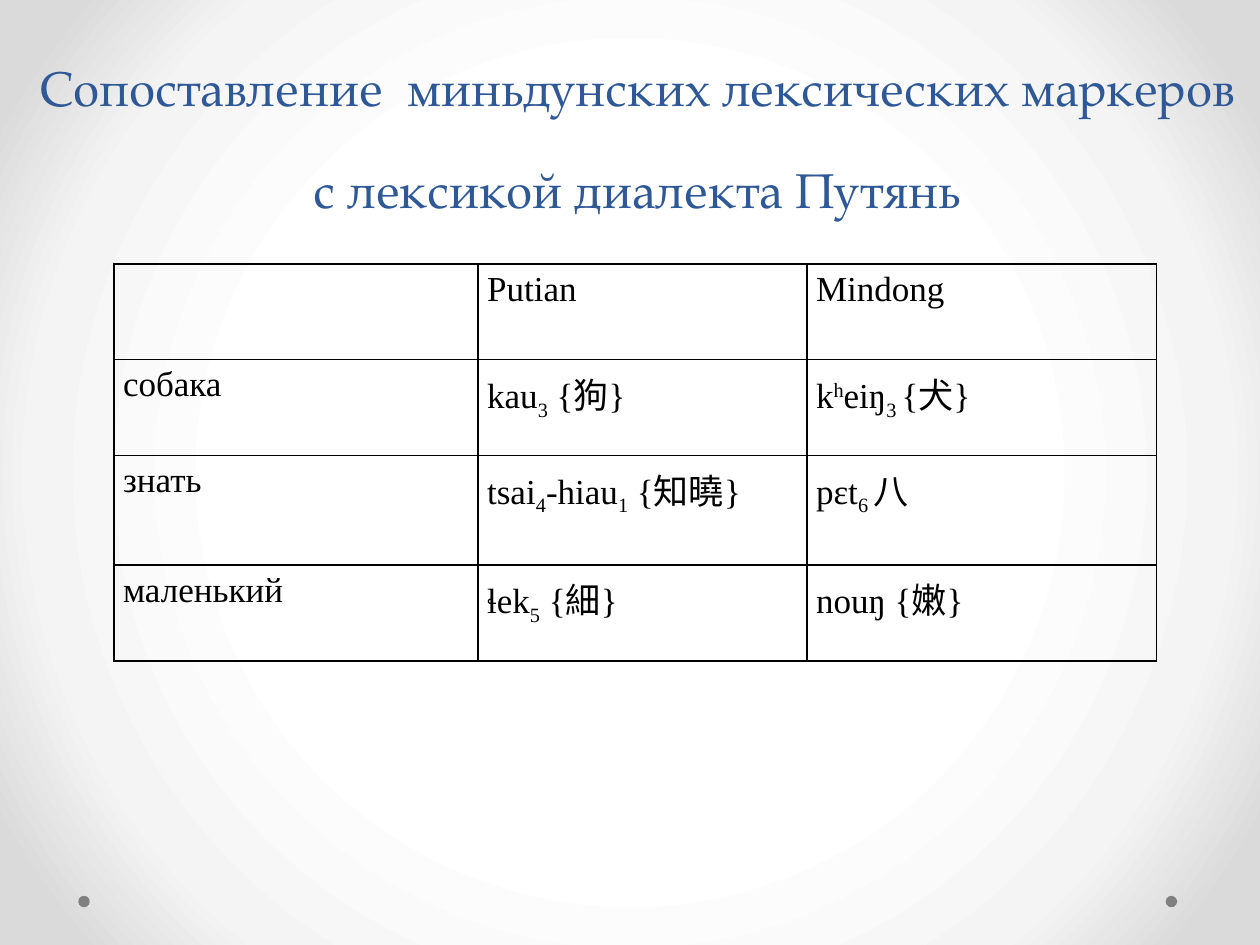
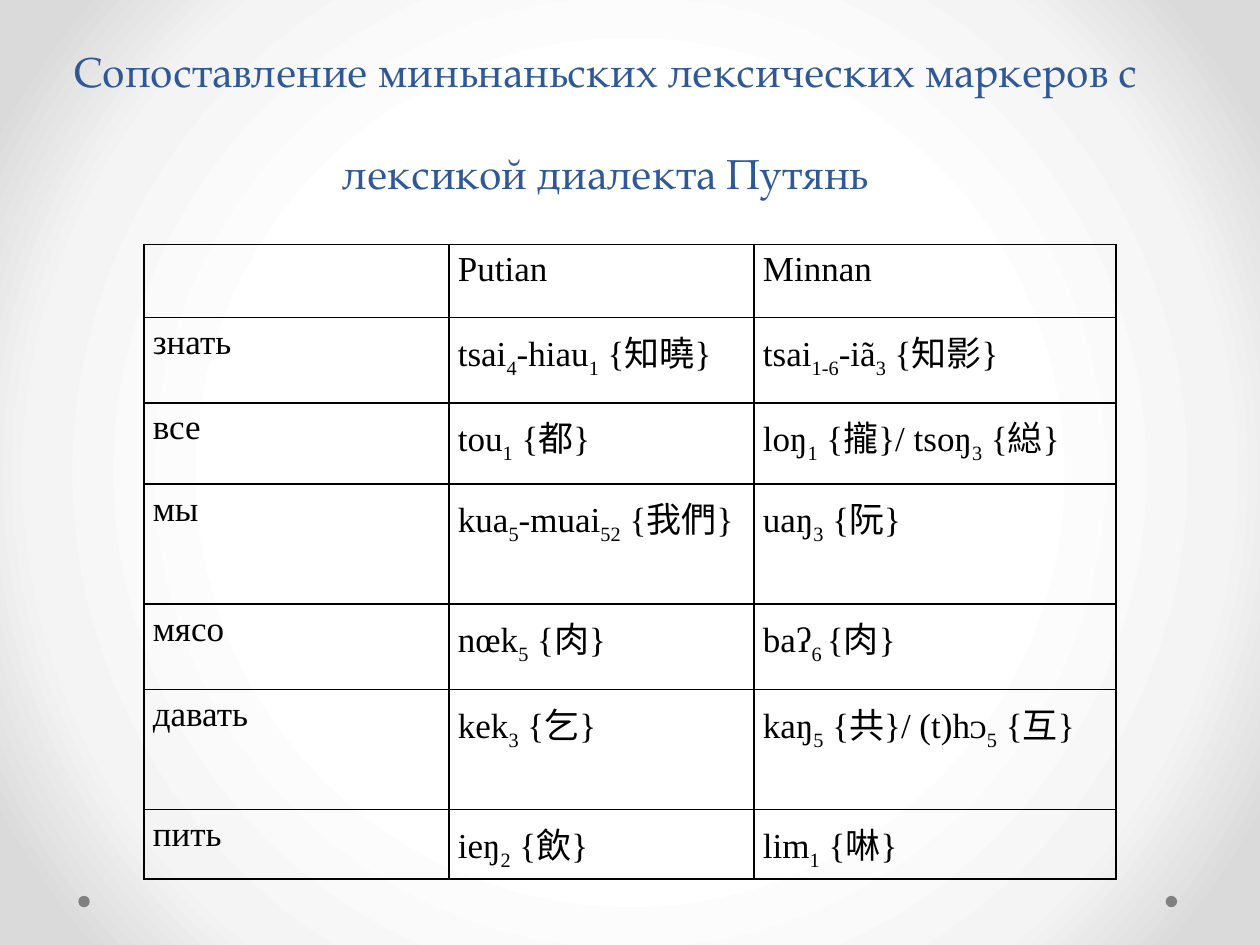
import dataclasses

import lxml.etree
import pptx
import pptx.dml.color
import pptx.enum.shapes
import pptx.enum.text
import pptx.oxml.ns
import pptx.util

Cm = pptx.util.Cm
Pt = pptx.util.Pt
RGB = pptx.dml.color.RGBColor.from_string
qn = pptx.oxml.ns.qn
ALIGN = pptx.enum.text.PP_ALIGN


@dataclasses.dataclass(frozen=True)
class Theme:
    title_font: str = "TeX Gyre Pagella"
    body_font: str = "Times New Roman"
    title_color: str = "2F5897"
    body_color: str = "000000"
    dot_color: str = "808080"
    glow: tuple = ((0, "FFFFFF"), (50, "FFFFFF"), (76, "F4F4F4"), (92, "DADADA"), (100, "DADADA"))
    wide_title_size: int = 28
    narrow_title_size: int = 24
    body_size: int = 20
    border_width: int = 1


BASELINES = {"_": "-25000", "^": "30000"}


def write_text(frame, text, *, font, size, color, align, spacing):
    paragraph = frame.paragraphs[0]
    paragraph.alignment = align
    paragraph.line_spacing = spacing
    for piece in text.split("|"):
        baseline = BASELINES.get(piece[:1])
        run = paragraph.add_run()
        run.text = piece[1:] if baseline else piece
        run.font.name = font
        run.font.size = Pt(size)
        run.font.color.rgb = RGB(color)
        if baseline:
            run.font._element.set("baseline", baseline)


class Deck:
    def __init__(self, theme):
        self.theme = theme
        self.presentation = pptx.Presentation()
        self.presentation.slide_width = Cm(25.4)
        self.presentation.slide_height = Cm(19.05)
        self.slide = None
        self.paint_background()

    def paint_background(self):
        master = self.presentation.slide_master
        master.background.fill.solid()
        solid = master.element.find(".//" + qn("p:bgPr")).find(qn("a:solidFill"))
        glow = lxml.etree.Element(qn("a:gradFill"), rotWithShape="1")
        stops = lxml.etree.SubElement(glow, qn("a:gsLst"))
        for position, color in self.theme.glow:
            stop = lxml.etree.SubElement(stops, qn("a:gs"), pos=str(position * 1000))
            lxml.etree.SubElement(stop, qn("a:srgbClr"), val=color)
        circle = lxml.etree.SubElement(glow, qn("a:path"), path="circle")
        lxml.etree.SubElement(circle, qn("a:fillToRect"), l="50000", t="50000", r="50000", b="50000")
        solid.getparent().replace(solid, glow)

    def start_slide(self):
        self.slide = self.presentation.slides.add_slide(self.presentation.slide_layouts[6])
        for left in (23.5, 1.58):
            self.dot(left, 18.06, 0.23)

    def dot(self, left, top, diameter):
        dot = self.slide.shapes.add_shape(
            pptx.enum.shapes.MSO_SHAPE.OVAL, Cm(left), Cm(top), Cm(diameter), Cm(diameter))
        dot.shadow.inherit = False
        dot.fill.solid()
        dot.fill.fore_color.rgb = RGB(self.theme.dot_color)
        dot.line.fill.background()

    def title(self, text, width, height, size):
        heading = self.slide.shapes.add_textbox(Cm(0.3), 0, Cm(width), Cm(height)).text_frame
        heading.word_wrap = True
        heading.vertical_anchor = pptx.enum.text.MSO_ANCHOR.BOTTOM
        write_text(heading, text, font=self.theme.title_font, size=size,
                   color=self.theme.title_color, align=ALIGN.CENTER, spacing=Pt(58))

    def word_table(self, left, top, widths, heights, words):
        table = self.slide.shapes.add_table(
            len(heights), len(widths), Cm(left), Cm(top), Cm(sum(widths)), Cm(sum(heights))).table
        table.first_row = False
        table.horz_banding = False
        for column, width in zip(table.columns, widths):
            column.width = Cm(width)
        for row, height, entries in zip(table.rows, heights, words):
            row.height = Cm(height)
            for cell, entry in zip(row.cells, entries):
                self.word_cell(cell, entry)

    def word_cell(self, cell, entry):
        cell.margin_left = cell.margin_right = Cm(0.18)
        cell.margin_top = cell.margin_bottom = 0
        self.border(cell)
        cell.fill.background()
        if entry:
            write_text(cell.text_frame, entry, font=self.theme.body_font, size=self.theme.body_size,
                       color=self.theme.body_color, align=ALIGN.JUSTIFY, spacing=1.15)

    def border(self, cell):
        properties = cell._tc.get_or_add_tcPr()
        for side in ("a:lnL", "a:lnR", "a:lnT", "a:lnB"):
            line = lxml.etree.SubElement(properties, qn(side), w=str(Pt(self.theme.border_width)))
            fill = lxml.etree.SubElement(line, qn("a:solidFill"))
            lxml.etree.SubElement(fill, qn("a:srgbClr"), val=self.theme.body_color)


MINDONG_WORDS = [
    ("", "Putian", "Mindong"),
    ("собака", "kau|_3| {狗}", "k|^h|eiŋ|_3 |{犬}"),
    ("знать", "tsai|_4|-hiau|_1| {知曉}", "pɛt|_6 |八"),
    ("маленький", "ɬek|_5| {細}", "nouŋ {嫩}"),
]

MINNAN_WORDS = [
    ("", "Putian", "Minnan"),
    ("знать", "tsai|_4|-hiau|_1| {知曉}", "tsai|_1-6|-iã|_3| {知影}"),
    ("все", "tou|_1| {都}", "loŋ|_1| {攏}/ tsoŋ|_3| {縂}"),
    ("мы", "kua|_5|-muai|_52| {我們}", "uaŋ|_3| {阮}"),
    ("мясо", "nœk|_5| {肉}", "baʔ|_6 |{肉}"),
    ("давать", "kek|_3| {乞}", "kaŋ|_5| {共}/ (t)hᴐ|_5| {互}"),
    ("пить", "ieŋ|_2| {飲}", "lim|_1| {啉}"),
]


def main():
    theme = Theme()
    deck = Deck(theme)

    deck.start_slide()
    deck.title("Сопоставление  миньдунских лексических маркеров с лексикой диалекта Путянь",
               width=25.1, height=4.52, size=theme.wide_title_size)
    deck.word_table(2.3, 5.32, (7.34, 6.63, 7.04), (1.93, 1.93, 2.21, 1.93), MINDONG_WORDS)

    deck.start_slide()
    deck.title("Сопоставление миньнаньских лексических маркеров с лексикой диалекта Путянь",
               width=23.83, height=4.11, size=theme.narrow_title_size)
    two_line_row = 2.42
    deck.word_table(2.9, 4.93, (6.15, 6.15, 7.3),
                    (1.47, 1.72, 1.64, two_line_row, 1.72, two_line_row, 1.4), MINNAN_WORDS)

    deck.presentation.save("out.pptx")


if __name__ == "__main__":
    main()
